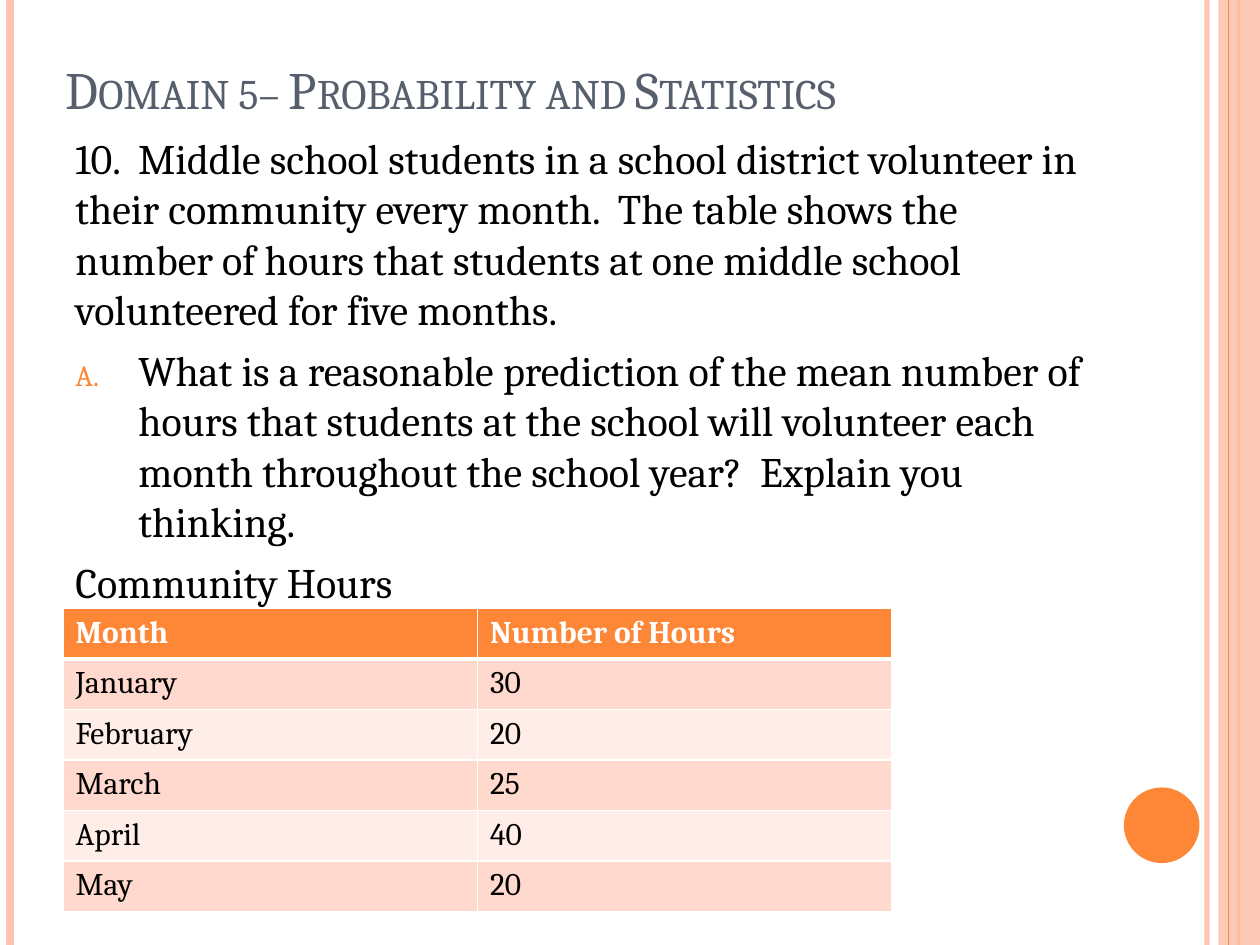
from lxml.etree import SubElement
from pptx import Presentation
from pptx.dml.color import RGBColor
from pptx.enum.shapes import MSO_CONNECTOR as CONNECTOR, MSO_SHAPE as SHAPE
from pptx.enum.text import MSO_ANCHOR as ANCHOR, MSO_AUTO_SIZE as AUTO_SIZE, PP_ALIGN as ALIGN
from pptx.oxml.ns import qn
from pptx.util import Inches, Pt

ORANGE = RGBColor(0xFE, 0x86, 0x37)
PEACH = RGBColor(0xFE, 0xC3, 0xAE)
SLATE = RGBColor(0x57, 0x5F, 0x6D)
BLACK = RGBColor(0, 0, 0)
WHITE = RGBColor(0xFF, 0xFF, 0xFF)
BANDS = [RGBColor(0xFF, 0xED, 0xE8), RGBColor(0xFF, 0xD9, 0xCE)]


def set_font(paragraph, size, color, bold=False):
    font = paragraph.font
    font.name, font.size, font.bold = "Cambria", Pt(size), bold
    font.color.rgb = color
    return paragraph._p.xpath("a:pPr/a:defRPr")[0]


def set_opacity(shape, percent):
    color = shape._element.xpath(".//a:srgbClr")[0]
    SubElement(color, qn("a:alpha"), val=str(percent * 1000))


presentation = Presentation()
presentation.slide_width = Inches(10)
presentation.slide_height = Inches(7.5)
slide = presentation.slides.add_slide(presentation.slide_layouts[5])
shapes = slide.shapes

for x, color, width, opacity in [
    (9.58, PEACH, 3, 93),
    (0.08, PEACH, 4.5, 100),
    (9.83, ORANGE, 1.5, 100),
    (9.75, ORANGE, 0.75, 100),
]:
    stripe = shapes.add_connector(
        CONNECTOR.STRAIGHT, Inches(x), 0, Inches(x), presentation.slide_height
    )
    stripe.line.color.rgb = color
    stripe.line.width = Pt(width)
    SubElement(stripe._element.spPr, qn("a:effectLst"))
    if opacity < 100:
        set_opacity(stripe, opacity)

for kind, left, top, width, height, color, opacity in [
    (SHAPE.RECTANGLE, 9.67, 0, 0.33, 7.5, PEACH, 87),
    (SHAPE.OVAL, 8.92, 6.25, 0.6, 0.6, ORANGE, 100),
]:
    shape = shapes.add_shape(kind, Inches(left), Inches(top), Inches(width), Inches(height))
    shape.shadow.inherit = False
    shape.fill.solid()
    shape.fill.fore_color.rgb = color
    shape.line.fill.background()
    if opacity < 100:
        set_opacity(shape, opacity)
        band = shape._element
        shapes[-2]._element.addprevious(band)

title = shapes.title
title.left, title.top = Inches(0.42), Inches(0.25)
title.width, title.height = Inches(8), Inches(0.75)
title.text_frame.text = "Domain 5– Probability and Statistics"
title.text_frame.vertical_anchor = ANCHOR.BOTTOM
title.text_frame.auto_size = AUTO_SIZE.NONE
heading = title.text_frame.paragraphs[0]
heading.alignment = ALIGN.LEFT
set_font(heading, 30, SLATE).set("cap", "small")

problem = shapes.add_textbox(Inches(0.5), Inches(1), Inches(8.25), Inches(6.42))
problem.text_frame.word_wrap = True
problem.text_frame.text = "\n".join([
    "10.  Middle school students in a school district volunteer in their community every month.  "
    "The table shows the number of hours that students at one middle school volunteered for five months.",
    "What is a reasonable prediction of the mean number of hours that students at the school "
    "will volunteer each month throughout the school year?  Explain you thinking.",
    "Community Hours",
])
for paragraph in problem.text_frame.paragraphs:
    paragraph.space_before = Pt(6)
    set_font(paragraph, 24, BLACK)

question = problem.text_frame.paragraphs[1]._p.pPr
question.set("marL", str(Inches(0.5)))
question.set("indent", str(-Inches(0.5)))
run_defaults = question.find(qn("a:defRPr"))
bullet_color = SubElement(question, qn("a:buClr"))
SubElement(bullet_color, qn("a:srgbClr"), val=str(ORANGE))
bullet_size = SubElement(question, qn("a:buSzPct"), val="70000")
bullet_number = SubElement(question, qn("a:buAutoNum"), type="alphaUcPeriod")
for bullet_part in (bullet_color, bullet_size, bullet_number):
    run_defaults.addprevious(bullet_part)

hours = [
    ("Month", "Number of Hours"),
    ("January", "30"),
    ("February", "20"),
    ("March", "25"),
    ("April", "40"),
    ("May", "20"),
]
row_height = Inches(0.39)
table = shapes.add_table(
    len(hours), 2, Inches(0.5), Inches(4.83), Inches(6.58), row_height * len(hours)
).table
for row, values in enumerate(hours):
    header = row == 0
    for column, value in enumerate(values):
        cell = table.cell(row, column)
        cell.text = value
        set_font(cell.text_frame.paragraphs[0], 18, WHITE if header else BLACK, header)
        properties = cell._tc.get_or_add_tcPr()
        for side in "LRTB":
            thick = (header and side == "B") or (row == 1 and side == "T")
            border = SubElement(properties, qn(f"a:ln{side}"), w=str(Pt(3 if thick else 1)))
            border_fill = SubElement(border, qn("a:solidFill"))
            SubElement(border_fill, qn("a:srgbClr"), val=str(WHITE))
        cell.fill.solid()
        cell.fill.fore_color.rgb = ORANGE if header else BANDS[row % 2]

presentation.save("out.pptx")
